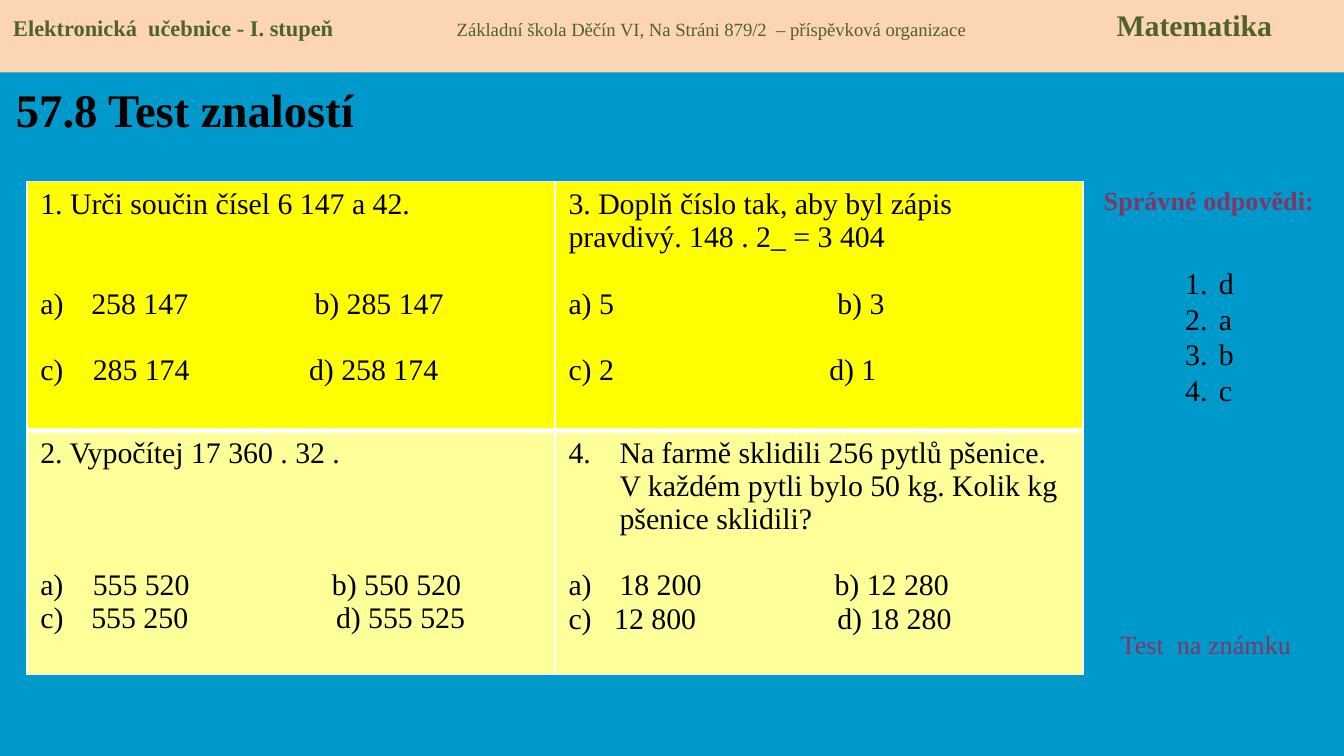
import pptx
import pptx.dml.color
import pptx.enum.shapes
import pptx.enum.text
import pptx.oxml.ns
import pptx.util
from lxml import etree

Inches = pptx.util.Inches
Pt = pptx.util.Pt
RGBColor = pptx.dml.color.RGBColor
qn = pptx.oxml.ns.qn

BLUE = RGBColor(0x00, 0x99, 0xCC)
PEACH = RGBColor(0xFC, 0xD5, 0xB5)
GREEN = RGBColor(0x4F, 0x62, 0x28)
PURPLE = RGBColor(0x81, 0x37, 0x63)
BLACK = RGBColor(0, 0, 0)
YELLOW = RGBColor(0xFF, 0xFF, 0x00)
PALE_YELLOW = RGBColor(0xFF, 0xFF, 0x99)
WHITE = RGBColor(0xFF, 0xFF, 0xFF)

FONT = "Times New Roman"
LINE = 17.7  # height in points of one 16 pt line
HANG = 0.38
NUMBER, LETTER = "arabicPeriod", "alphaLcParenR"

# Content
HEADER = [
    ("Elektronická  učebnice - I. stupeň", 12, True),
    ("\tZákladní škola Děčín VI, Na Stráni 879/2  – příspěvková organizace", 10, False),
    ("\tMatematika", 16, True),
]
HEADER_TABS = [3.3, 8.21]

# text, place, size, bold, colour, anchor, alignment, wrap
LABELS = [
    ("57.8 Test znalostí", (0.02, 0.55, 2.75, 0.52), 25, True, BLACK, "MIDDLE", "LEFT", False),
    ("Správné odpovědi:", (8.05, 1.32, 1.89, 0.34), 14, True, PURPLE, "TOP", "CENTER", True),
    ("Test  na známku", (8.24, 4.63, 1.57, 0.34), 14, False, PURPLE, "TOP", "LEFT", True),
]
ANSWERS = ["d", "a", "b", "c"]

# Each cell lists its paragraphs: text, list style and start, empty lines before, tab stops
QUESTIONS = [
    [
        [("1. Urči součin čísel 6 147 a 42.", None, 0, ()),
         ("258 147\tb) 285 147", (LETTER, 1), 2, (2.04,)),
         ("c)\t285 174\td) 258 174", None, 1, (0.39, 2.0))],
        [("3. Doplň číslo tak, aby byl zápis pravdivý. 148 . 2_ = 3 404", None, 0, ()),
         ("a) 5\tb) 3", None, 1, (2.0,)),
         ("c) 2\td) 1", None, 1, (1.94,))],
    ],
    [
        [("2. Vypočítej 17 360 . 32 .", None, 0, ()),
         ("a)\t555 520\tb) 550 520", None, 3, (0.39, 2.17)),
         ("555 250\td) 555 525", (LETTER, 3), 0, (2.2,))],
        [("Na farmě sklidili 256 pytlů pšenice. V každém pytli bylo 50 kg. "
          "Kolik kg pšenice sklidili?", (NUMBER, 4), 0, ()),
         ("18 200\tb) 12 280", (LETTER, 1), 1, (1.98,)),
         ("c)\t12 800\td) 18 280", None, 0, (0.34, 2.0))],
    ],
]
ROW_FILLS = [YELLOW, PALE_YELLOW]
ROW_HEIGHTS = [1.85, 1.82]
COLUMN_WIDTH = 3.93


def add_span(para, text, size, color=BLACK, bold=False):
    span = para.add_run()
    span.text = text
    formats = {"name": FONT, "size": Pt(size), "bold": bold}
    for name, value in formats.items():
        setattr(span.font, name, value)
    span.font.color.rgb = color


def add_tabs(para, stops):
    tabs = etree.SubElement(para._p.get_or_add_pPr(), qn("a:tabLst"))
    for stop in stops:
        etree.SubElement(tabs, qn("a:tab"), pos=str(Inches(stop)), algn="l")


def add_number(para, indent, style, start=1):
    properties = para._p.get_or_add_pPr()
    properties.set("marL", str(Inches(indent)))
    properties.set("indent", str(-Inches(indent)))
    etree.SubElement(properties, qn("a:buFont"), typeface=FONT)
    etree.SubElement(properties, qn("a:buAutoNum"), type=style, startAt=str(start))


def add_box(page, place, wrap=True, anchor="TOP"):
    frame = page.shapes.add_textbox(*map(Inches, place)).text_frame
    frame.word_wrap = wrap
    frame.vertical_anchor = getattr(pptx.enum.text.MSO_ANCHOR, anchor)
    return frame


def set_borders(cell, widths):
    properties = cell._tc.get_or_add_tcPr()
    for index, (side, width) in enumerate(widths.items()):
        line = etree.Element(qn("a:ln" + side), w=str(Pt(width)))
        fill = etree.SubElement(line, qn("a:solidFill"))
        etree.SubElement(fill, qn("a:srgbClr"), val=str(WHITE))
        properties.insert(index, line)


def fill_cell(cell, lines):
    frame = cell.text_frame
    for index, (text, numbering, gap, stops) in enumerate(lines):
        para = frame.add_paragraph() if index else frame.paragraphs[0]
        para.space_before = Pt(gap * LINE)
        if numbering:
            add_number(para, HANG, *numbering)
        if stops:
            add_tabs(para, stops)
        add_span(para, text, 16)


def main():
    deck = pptx.Presentation()
    deck.slide_width = Inches(10)
    deck.slide_height = deck.slide_width * 9 // 16
    page = deck.slides.add_slide(deck.slide_layouts[6])
    page.background.fill.solid()
    page.background.fill.fore_color.rgb = BLUE

    # Title and side labels
    for text, place, size, bold, color, anchor, alignment, wrap in LABELS:
        para = add_box(page, place, wrap, anchor).paragraphs[0]
        para.alignment = getattr(pptx.enum.text.PP_ALIGN, alignment)
        add_span(para, text, size, color, bold)

    # Question table
    table = page.shapes.add_table(
        2, 2, Inches(0.2), Inches(1.35), Inches(2 * COLUMN_WIDTH), Inches(sum(ROW_HEIGHTS))
    ).table
    table.first_row = table.horz_banding = False
    for column in table.columns:
        column.width = Inches(COLUMN_WIDTH)
    for r, questions in enumerate(QUESTIONS):
        table.rows[r].height = Inches(ROW_HEIGHTS[r])
        for c, lines in enumerate(questions):
            cell = table.cell(r, c)
            cell.fill.solid()
            cell.fill.fore_color.rgb = ROW_FILLS[r]
            inner = {"T": 3 if r else 1, "B": 1 if r else 3}
            set_borders(cell, {"L": 1, "R": 1, **inner})
            fill_cell(cell, lines)

    # Correct answers
    frame = add_box(page, (8.72, 1.92, 0.55, 1.72))
    for index, answer in enumerate(ANSWERS):
        para = frame.add_paragraph() if index else frame.paragraphs[0]
        para.line_spacing = Pt(19.1)
        add_number(para, 0.25, NUMBER)
        add_span(para, answer, 16)

    # Header band
    band = page.shapes.add_shape(
        pptx.enum.shapes.MSO_SHAPE.RECTANGLE, 0, 0, deck.slide_width, Inches(0.54)
    )
    band.shadow.inherit = False
    band.fill.solid()
    band.fill.fore_color.rgb = PEACH
    band.line.fill.background()
    band.text_frame.word_wrap = True
    band.text_frame.vertical_anchor = pptx.enum.text.MSO_ANCHOR.TOP
    para = band.text_frame.paragraphs[0]
    para.alignment = pptx.enum.text.PP_ALIGN.LEFT
    add_tabs(para, HEADER_TABS)
    for text, size, bold in HEADER:
        add_span(para, text, size, GREEN, bold)

    deck.save("out.pptx")


if __name__ == "__main__":
    main()
